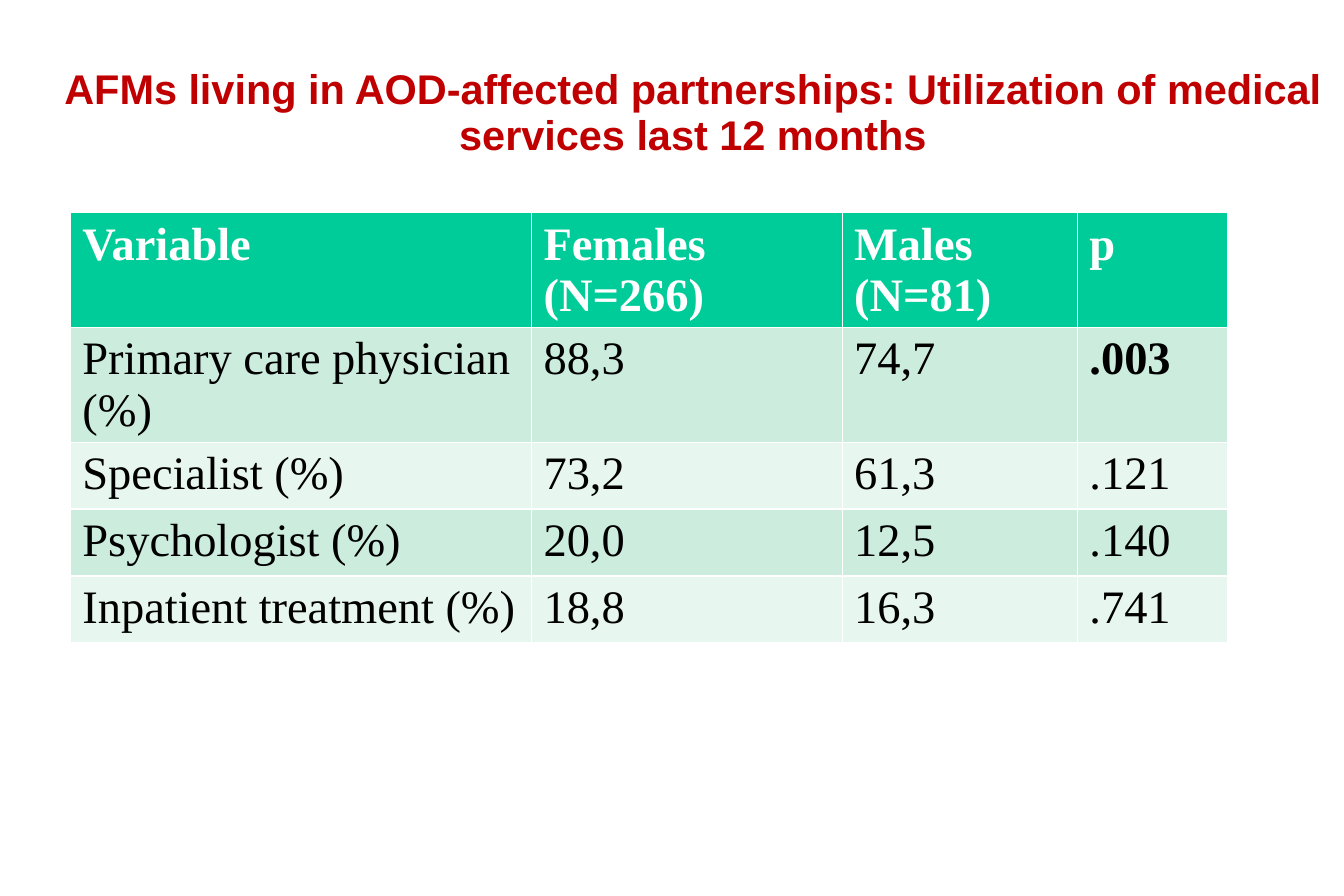
from pptx import Presentation
from pptx.dml.color import RGBColor
from pptx.enum.text import MSO_ANCHOR, MSO_AUTO_SIZE, PP_ALIGN
from pptx.util import Pt

PX = 9144  # 100 px to the inch


def style(font, name, size, color, bold):
    font.name, font.size, font.bold = name, Pt(size), bold
    font.color.rgb = RGBColor.from_string(color)


prs = Presentation()
prs.slide_width, prs.slide_height = 1125 * PX, 750 * PX
s = prs.slides.add_slide(prs.slide_layouts[5])

# Title
title = s.shapes.title
title.left, title.top, title.width, title.height = [v * PX for v in (35, 21, 1090, 146)]
tf = title.text_frame
tf.text = "AFMs living in AOD-affected partnerships: Utilization of medical services last 12 months"
tf.word_wrap = True
tf.auto_size = MSO_AUTO_SIZE.NONE
tf.vertical_anchor = MSO_ANCHOR.MIDDLE
tf.margin_left = tf.margin_right = tf.margin_bottom = 0
tf.margin_top = 2 * PX
p = tf.paragraphs[0]
p.alignment = PP_ALIGN.CENTER
p.line_spacing = 0.93
p.space_before = p.space_after = Pt(23.2)
style(p.font, "Arial", 25, "C00000", True)

# Table: the default style supplies the white borders
rows = [
    ("Variable", "Females (N=266)", "Males (N=81)", "p"),
    ("Primary care physician (%)", "88,3", "74,7", ".003"),
    ("Specialist (%)", "73,2", "61,3", ".121"),
    ("Psychologist (%)", "20,0", "12,5", ".140"),
    ("Inpatient treatment (%)", "18,8", "16,3", ".741"),
]
widths = [386, 260, 197, 126]
row_h = 56
table = s.shapes.add_table(len(rows), len(widths), 59 * PX, 178 * PX,
                           sum(widths) * PX, row_h * len(rows) * PX).table
for col, w in zip(table.columns, widths):
    col.width = w * PX

for i, row in enumerate(rows):
    table.rows[i].height = row_h * PX
    header = i == 0
    fill = "00CC99" if header else ("E7F6EF", "CCECDE")[i % 2]
    for j, text in enumerate(row):
        cell = table.cell(i, j)
        cell.text = text
        cell.fill.solid()
        cell.fill.fore_color.rgb = RGBColor.from_string(fill)
        significant = text == ".003"
        style(cell.text_frame.paragraphs[0].font, "Times New Roman", 28,
              "FFFFFF" if header else "000000", header or significant)

prs.save("out.pptx")
